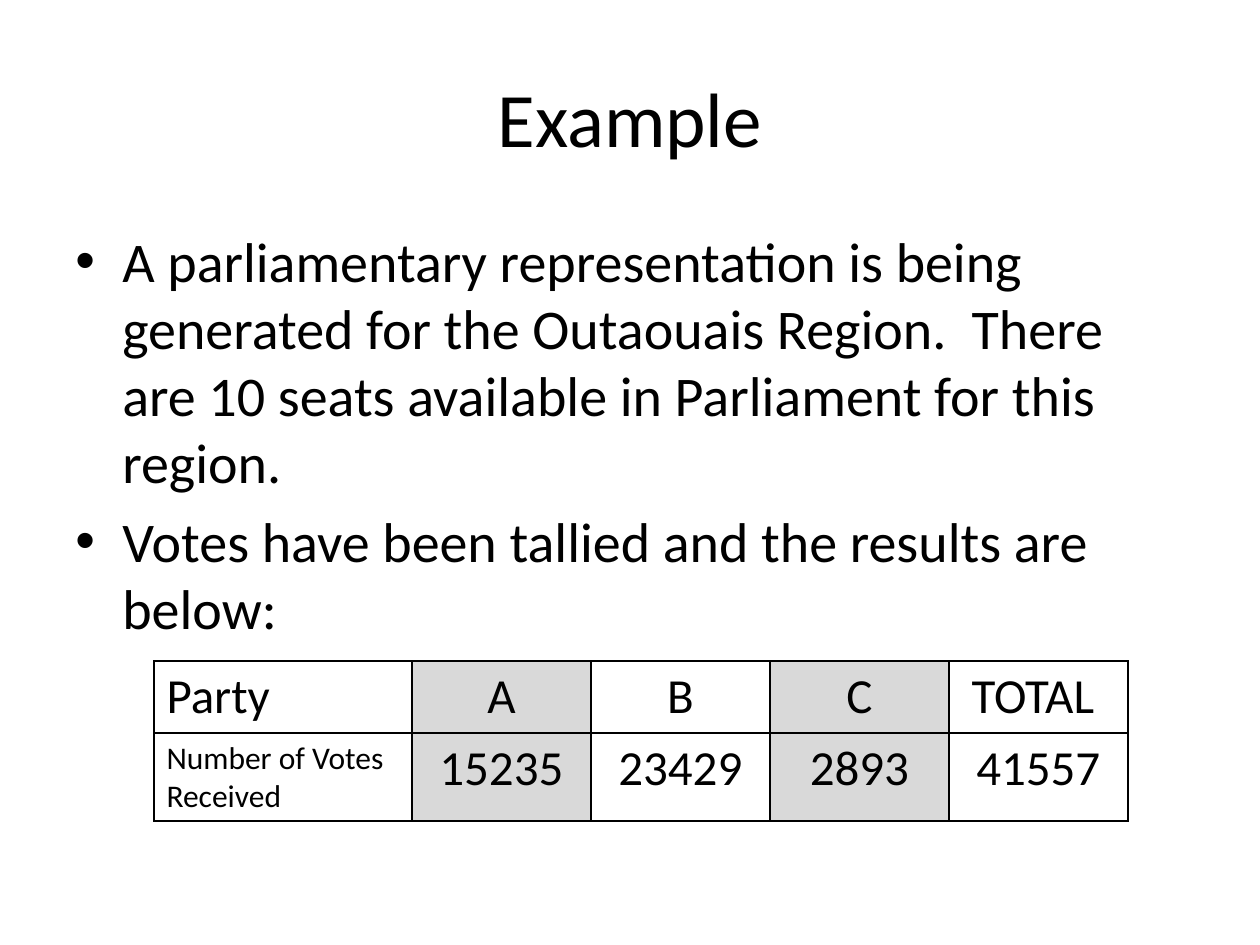
from dataclasses import dataclass

from lxml import etree
from pptx import Presentation
from pptx.dml.color import RGBColor
from pptx.enum.text import MSO_ANCHOR, PP_ALIGN
from pptx.oxml.ns import qn
from pptx.util import Emu, Pt

LEFT, CENTER = PP_ALIGN.LEFT, PP_ALIGN.CENTER
TOP, MIDDLE = MSO_ANCHOR.TOP, MSO_ANCHOR.MIDDLE
EMU_PER_PX = 914400 / 126
TITLE_ONLY = 5


@dataclass(frozen=True)
class Theme:
    font: str = "Calibri"
    ink: str = "000000"
    shade: str = "D9D9D9"
    title: int = 44
    body: int = 32
    cell: int = 28
    label: int = 18
    border: int = 1


@dataclass(frozen=True)
class Box:
    x: int
    y: int
    w: int
    h: int

    def emu(self) -> tuple:
        return tuple(px(v) for v in (self.x, self.y, self.w, self.h))


@dataclass(frozen=True)
class Column:
    head: str
    votes: str
    width: int = 179
    align: PP_ALIGN = CENTER
    votes_size: int = Theme.cell
    shaded: bool = False


THEME = Theme()
TITLE_BOX = Box(63, 38, 1134, 158)
BODY_BOX = Box(63, 220, 1134, 624)
TABLE_X, TABLE_Y = 154, 661
ROW_HEIGHTS = (72, 88)
BULLET_INDENT = 47

BULLETS = (
    "A parliamentary representation is being generated for the Outaouais Region.  "
    "There are 10 seats available in Parliament for this region.",
    "Votes have been tallied and the results are below:",
)
COLUMNS = (
    Column("Party", "Number of Votes Received", 258, LEFT, THEME.label),
    Column("A", "15235", shaded=True),
    Column("B", "23429"),
    Column("C", "2893", shaded=True),
    Column("TOTAL ", "41557"),
)


def px(n: int) -> Emu:
    return Emu(round(n * EMU_PER_PX))


def write(p, text: str, size: int, align: PP_ALIGN) -> None:
    p.alignment = align
    r = p.add_run()
    r.text = text
    fmt = {"name": THEME.font, "size": Pt(size), "bold": False}
    for key, value in fmt.items():
        setattr(r.font, key, value)
    r.font.color.rgb = RGBColor.from_string(THEME.ink)


def add_bullet(p) -> None:
    pPr = p._p.get_or_add_pPr()
    pPr.set("marL", str(px(BULLET_INDENT)))
    pPr.set("indent", str(-px(BULLET_INDENT)))
    etree.SubElement(pPr, qn("a:buFont"), typeface="Arial")
    etree.SubElement(pPr, qn("a:buChar"), char="•")


def add_borders(cell) -> None:
    tcPr = cell._tc.get_or_add_tcPr()
    for side in ("lnL", "lnR", "lnT", "lnB"):
        ln = etree.SubElement(tcPr, qn(f"a:{side}"), w=str(Pt(THEME.border)))
        fill = etree.SubElement(ln, qn("a:solidFill"))
        etree.SubElement(fill, qn("a:srgbClr"), val=THEME.ink)


def draw_title(slide, text: str) -> None:
    sp = slide.shapes.title
    sp.left, sp.top, sp.width, sp.height = TITLE_BOX.emu()
    sp.text_frame.vertical_anchor = MIDDLE
    write(sp.text_frame.paragraphs[0], text, THEME.title, CENTER)


def draw_body(slide, bullets: tuple) -> None:
    tf = slide.shapes.add_textbox(*BODY_BOX.emu()).text_frame
    tf.word_wrap = True
    tf.vertical_anchor = TOP
    for i, text in enumerate(bullets):
        p = tf.add_paragraph() if i else tf.paragraphs[0]
        p.space_before = Pt(THEME.body * 0.2)
        write(p, text, THEME.body, LEFT)
        add_bullet(p)


def draw_cell(cell, text: str, size: int, col: Column) -> None:
    write(cell.text_frame.paragraphs[0], text, size, col.align)
    add_borders(cell)
    if col.shaded:
        cell.fill.solid()
        cell.fill.fore_color.rgb = RGBColor.from_string(THEME.shade)
    else:
        cell.fill.background()


def draw_table(slide, columns: tuple) -> None:
    box = Box(TABLE_X, TABLE_Y, sum(c.width for c in columns), sum(ROW_HEIGHTS))
    table = slide.shapes.add_table(len(ROW_HEIGHTS), len(columns), *box.emu()).table
    table.first_row = table.horz_banding = False
    for row, height in zip(table.rows, ROW_HEIGHTS):
        row.height = px(height)
    for i, col in enumerate(columns):
        table.columns[i].width = px(col.width)
        draw_cell(table.cell(0, i), col.head, THEME.cell, col)
        draw_cell(table.cell(1, i), col.votes, col.votes_size, col)


def main() -> None:
    prs = Presentation()
    prs.slide_width, prs.slide_height = px(1260), px(945)
    slide = prs.slides.add_slide(prs.slide_layouts[TITLE_ONLY])

    # Heading and explanation
    draw_title(slide, "Example")
    draw_body(slide, BULLETS)

    # Vote counts by party
    draw_table(slide, COLUMNS)

    prs.save("out.pptx")


if __name__ == "__main__":
    main()
